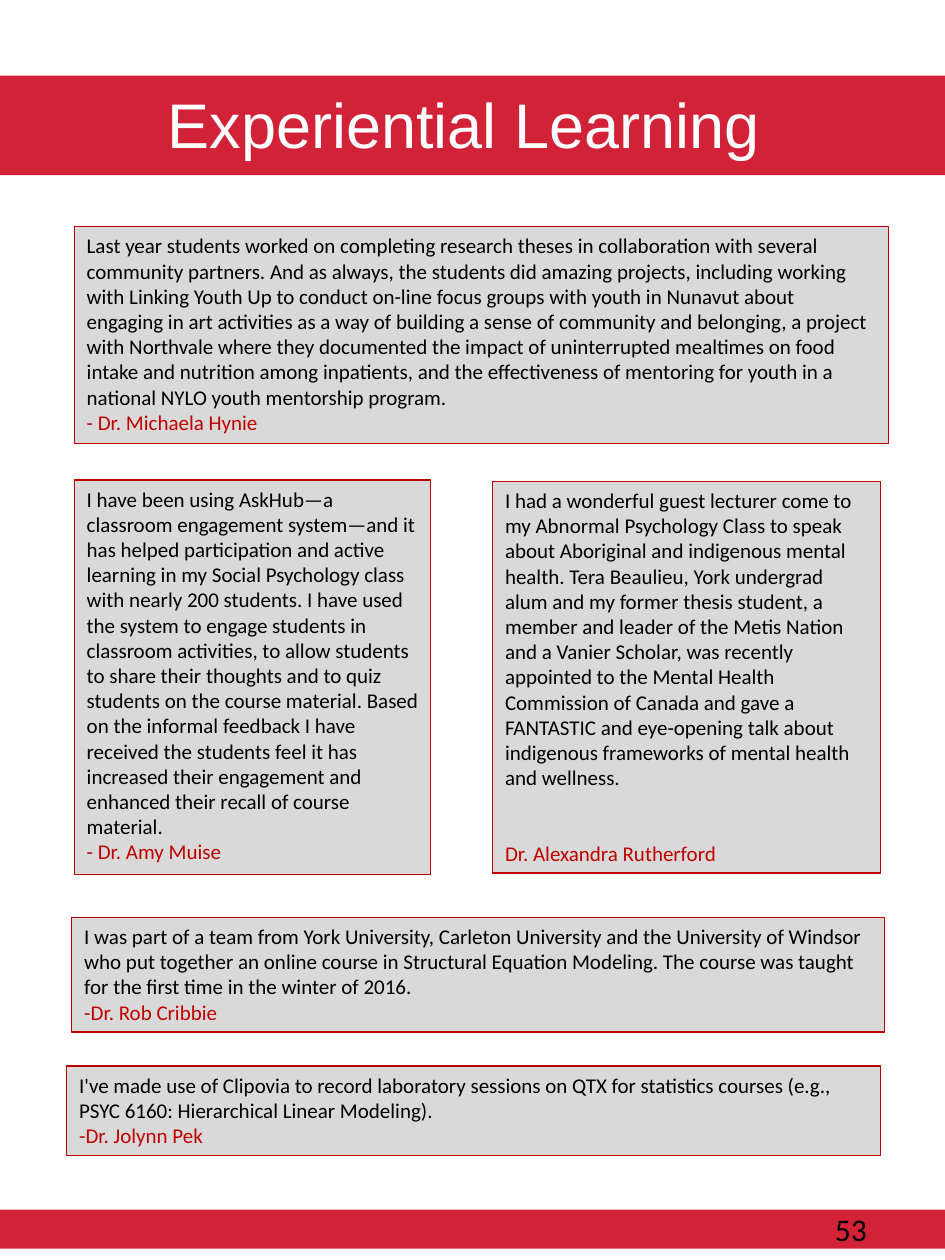
from pptx import Presentation
from pptx.dml.color import RGBColor
from pptx.enum import shapes, text
from pptx.util import Inches, Pt

COLORS = {"banner": "D12238", "panel": "D9D9D9", "accent": "C00000", "body": "000000", "title": "FFFFFF"}
TITLE = "Experiential Learning "
PAGE_NUMBER = "53"
BANNER = (0, 0.6, 7.5, 0.79)
FOOTER = (0, 9.6, 7.5, 0.31)
TITLE_BOX = (0.13, 0.67, 7.24, 0.61)

QUOTES = [
    ((0.59, 1.8, 6.46, 1.72),
     "Last year students worked on completing research theses in collaboration with several community partners. "
     "And as always, the students did amazing projects, including working with Linking Youth Up to conduct on-line "
     "focus groups with youth in Nunavut about engaging in art activities as a way of building a sense of community "
     "and belonging, a project with Northvale where they documented the impact of uninterrupted mealtimes on food "
     "intake and nutrition among inpatients, and the effectiveness of mentoring for youth in a national NYLO youth "
     "mentorship program.",
     "- Dr. Michaela Hynie", 0),
    ((0.59, 3.81, 2.83, 3.13),
     "I have been using AskHub—a classroom engagement system—and it has helped participation and active learning "
     "in my Social Psychology class with nearly 200 students. I have used the system to engage students in classroom "
     "activities, to allow students to share their thoughts and to quiz students on the course material. Based on "
     "the informal feedback I have received the students feel it has increased their engagement and enhanced their "
     "recall of course material.",
     "- Dr. Amy Muise", 0),
    ((3.91, 3.82, 3.08, 3.11),
     "I had a wonderful guest lecturer come to my Abnormal Psychology Class to speak about Aboriginal and indigenous "
     "mental health. Tera Beaulieu, York undergrad alum and my former thesis student, a member and leader of the "
     "Metis Nation and a Vanier Scholar, was recently appointed to the Mental Health Commission of Canada and gave "
     "a FANTASTIC and eye-opening talk about indigenous frameworks of mental health and wellness.",
     "Dr. Alexandra Rutherford", 29),
    ((0.57, 7.28, 6.45, 0.91),
     "I was part of a team from York University, Carleton University and the University of Windsor who put together "
     "an online course in Structural Equation Modeling. The course was taught for the first time in the winter of "
     "2016.",
     "-Dr. Rob Cribbie", 0),
    ((0.53, 8.46, 6.46, 0.71),
     "I've made use of Clipovia to record laboratory sessions on QTX for statistics courses (e.g., PSYC 6160: "
     "Hierarchical Linear Modeling).",
     "-Dr. Jolynn Pek", 0),
]


def color(name):
    return RGBColor.from_string(COLORS[name])


def add_rectangle(slide, box, fill, line=None):
    shape = slide.shapes.add_shape(shapes.MSO_SHAPE.RECTANGLE, *map(Inches, box))
    shape.shadow.inherit = False
    shape.fill.solid()
    shape.fill.fore_color.rgb = color(fill)
    if line:
        shape.line.color.rgb = color(line)
        shape.line.width = Pt(0.75)
    else:
        shape.line.fill.background()
    return shape


def prepare_frame(shape, anchor, margin=None):
    frame = shape.text_frame
    frame.word_wrap = True
    frame.vertical_anchor = anchor
    if margin is not None:
        frame.margin_left = frame.margin_right = Inches(margin)
        frame.margin_top = frame.margin_bottom = 0
    return frame


def add_run(paragraph, words, size, ink, align, font="Calibri"):
    paragraph.alignment = align
    run = paragraph.add_run()
    run.text = words
    run.font.name = font
    run.font.size = Pt(size)
    run.font.color.rgb = color(ink)


def add_quote(slide, box, words, author, gap):
    panel = add_rectangle(slide, box, "panel", "accent")
    frame = prepare_frame(panel, text.MSO_ANCHOR.TOP)
    add_run(frame.paragraphs[0], words, 12, "body", text.PP_ALIGN.LEFT)
    signature = frame.add_paragraph()
    signature.space_before = Pt(gap)
    add_run(signature, author, 12, "accent", text.PP_ALIGN.LEFT)


def main():
    presentation = Presentation()
    presentation.slide_width, presentation.slide_height = Inches(7.5), Inches(10)
    slide = presentation.slides.add_slide(presentation.slide_layouts[5])

    banner = add_rectangle(slide, BANNER, "banner")
    title = slide.shapes.title
    banner._element.addnext(title._element)
    title.left, title.top, title.width, title.height = map(Inches, TITLE_BOX)
    frame = prepare_frame(title, text.MSO_ANCHOR.MIDDLE, 0)
    add_run(frame.paragraphs[0], TITLE, 36, "title", text.PP_ALIGN.CENTER, "Arial")

    for quote in QUOTES:
        add_quote(slide, *quote)

    footer = add_rectangle(slide, FOOTER, "banner")
    frame = prepare_frame(footer, text.MSO_ANCHOR.MIDDLE, 0.62)
    add_run(frame.paragraphs[0], PAGE_NUMBER, 18, "body", text.PP_ALIGN.RIGHT)

    presentation.save("out.pptx")


if __name__ == "__main__":
    main()
